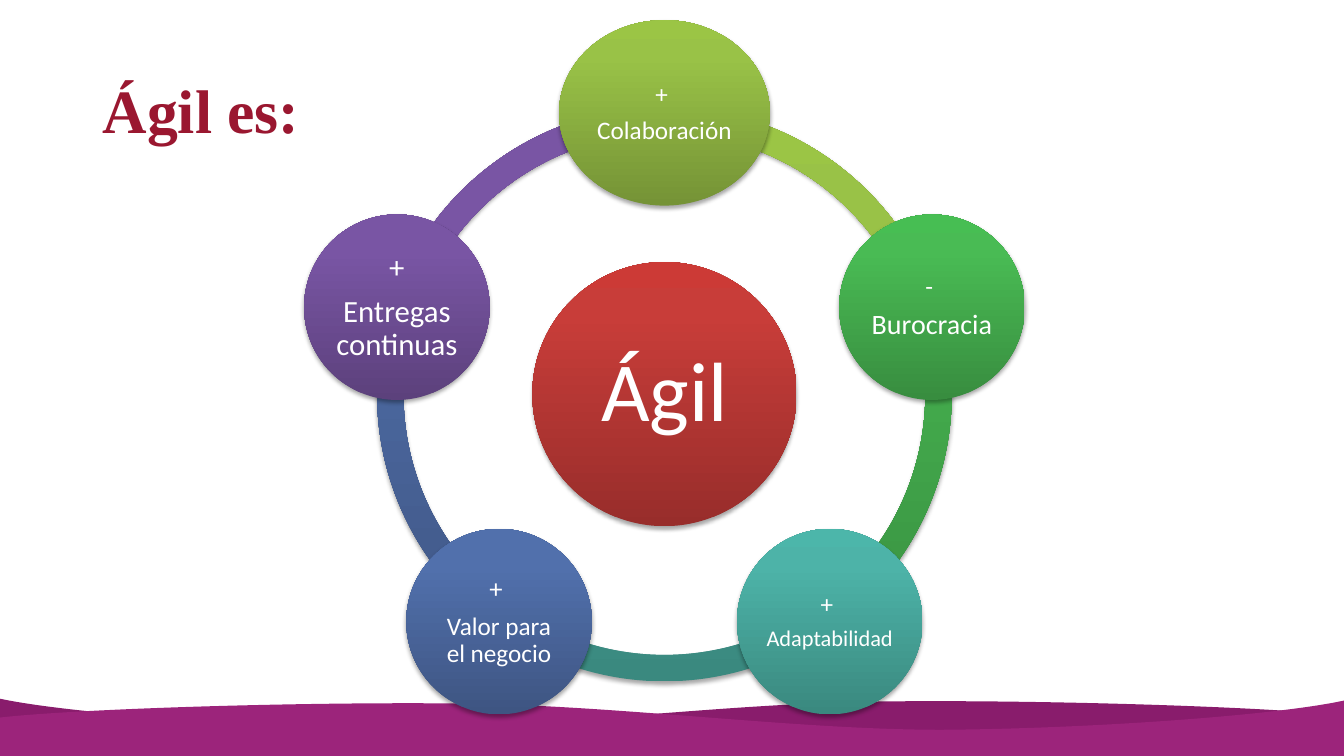
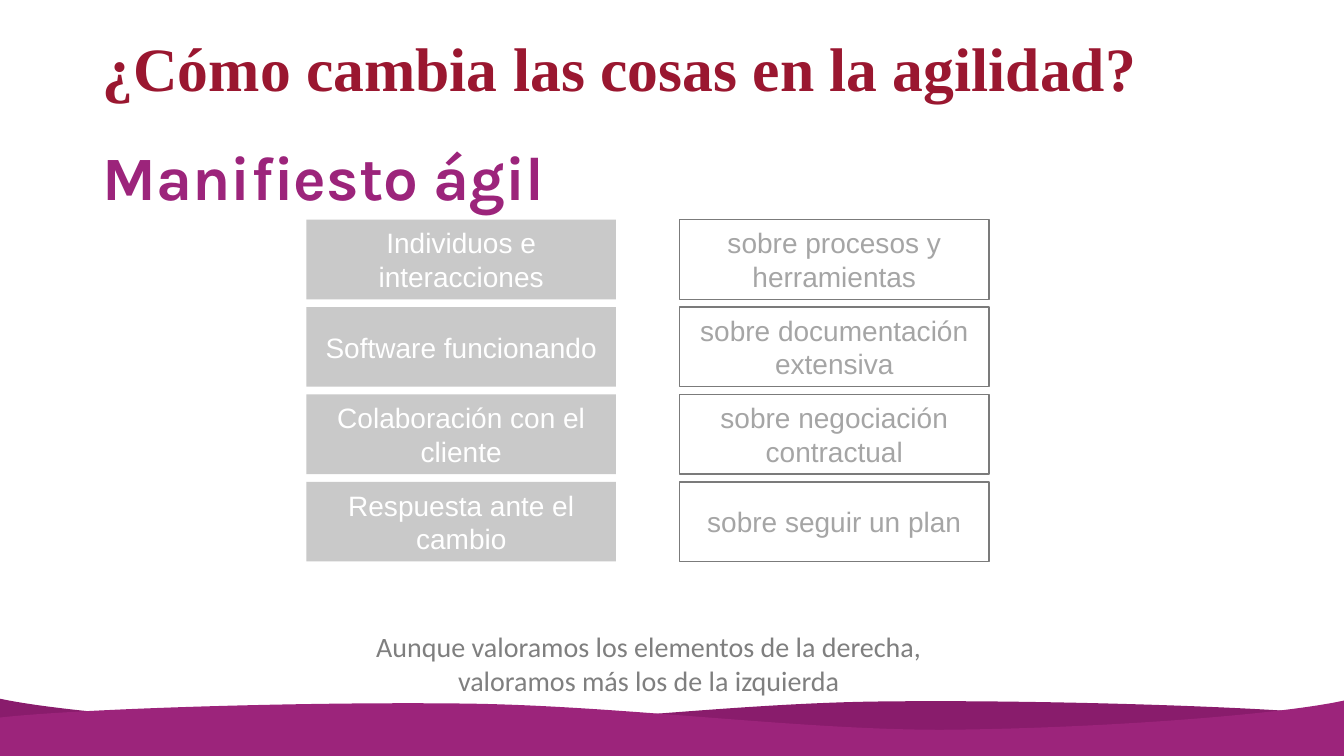
from copy import deepcopy
from dataclasses import dataclass
from math import cos, radians, sin

from lxml import etree
from pptx import Presentation
from pptx.dml.color import RGBColor
from pptx.enum.shapes import MSO_SHAPE as Preset
from pptx.enum.text import MSO_ANCHOR as Anchor, PP_ALIGN as Align
from pptx.oxml.ns import qn
from pptx.util import Inches, Pt


@dataclass(frozen=True)
class Theme:
    """Colours, fonts and type sizes shared by the slides."""
    title: str = "9A1730"
    wave_back: str = "891C6C"
    wave_front: str = "9C247B"
    white: str = "FFFFFF"
    valued: str = "C9C9C9"
    other_text: str = "A5A5A5"
    other_line: str = "7B7B7B"
    note: str = "7F7F7F"
    title_font: str = "Times New Roman"
    subtitle_font: str = "Karla"
    body_font: str = "Calibri"
    box_font: str = "Arial"
    title_size: float = 44
    hub_size: float = 60
    body_size: float = 20


THEME = Theme()
SLIDE_WIDTH, SLIDE_HEIGHT = 13.33, 7.5


@dataclass(frozen=True)
class Box:
    left: float
    top: float
    width: float
    height: float

    def lengths(self) -> list:
        return [Inches(v) for v in (self.left, self.top, self.width, self.height)]

    @classmethod
    def centred(cls, x: float, y: float, width: float, height: float) -> "Box":
        return cls(x - width / 2, y - height / 2, width, height)


@dataclass(frozen=True)
class Para:
    text: str
    font: str
    size: float
    color: str
    bold: bool = False
    align: Align = Align.CENTER
    line_spacing: float = 1.0
    space_before: float = 0


@dataclass(frozen=True)
class Gradient:
    bottom: str
    middle: str
    top: str


@dataclass(frozen=True)
class Node:
    sign: str
    label: str
    gradient: Gradient
    sign_size: float
    label_size: float
    inset: float
    width: float = 1.84


# Ring of slide 1, clockwise from the top
NODES = (
    Node("+ ", "Colaboración", Gradient("759336", "99C247", "9BC545"), 18, 18, 0.02, 2.09),
    Node("- ", "Burocracia", Gradient("388D3F", "49BB54", "47BE53"), 18, 20, 0.02),
    Node("+ ", "Adaptabilidad", Gradient("3A897F", "4DB3A8", "4CB6AA"), 18, 16, 0),
    Node("+ ", "Valor para el negocio", Gradient("3E5582", "5170AC", "506FAF"), 19, 18, 0.03),
    Node("+", "Entregas continuas", Gradient("5C417C", "7955A4", "7955A6"), 22, 22, 0.03),
)
HUB_GRADIENT = Gradient("982D2B", "C83D39", "CC3A36")
CENTRE_X, CENTRE_Y = 6.59, 3.91
ORBIT, RING, HUB, NODE_HEIGHT = 2.79, 5.7, 2.62, 1.84
RING_THICKNESS = 0.046

# Pairs of slide 2
PAIRS = (
    ("Individuos e interacciones", "sobre procesos y herramientas"),
    ("Software funcionando", "sobre documentación extensiva"),
    ("Colaboración con el cliente", "sobre negociación contractual"),
    ("Respuesta ante el cambio", "sobre seguir un plan"),
)
LEFT_COLUMN, RIGHT_COLUMN = 3.04, 6.74
FIRST_ROW, LAST_ROW = 2.18, 4.78
PAIR_WIDTH, PAIR_HEIGHT = 3.07, 0.79

# Top edge of the back wave, as Bézier points from right to left
WAVE = ((13.33, 7.1), (12.56, 7.01), (10.26, 6.94), (8.7, 6.96), (7.15, 6.98),
        (5.43, 7.22), (3.98, 7.22), (2.53, 7.21), (0.68, 7.08), (-0.01, 6.93))


def rgb(color: str) -> RGBColor:
    return RGBColor.from_string(color)


def write(shape, paras: list, inset_x: float = 0.1, inset_y: float = 0.05,
          anchor=Anchor.MIDDLE) -> None:
    frame = shape.text_frame
    frame.word_wrap = True
    frame.vertical_anchor = anchor
    frame.margin_left = frame.margin_right = Inches(inset_x)
    frame.margin_top = frame.margin_bottom = Inches(inset_y)
    for index, para in enumerate(paras):
        target = frame.add_paragraph() if index else frame.paragraphs[0]
        target.text = para.text
        target.alignment = para.align
        target.line_spacing = para.line_spacing
        if para.space_before:
            target.space_before = Pt(para.space_before)
        font = target.font
        font.name, font.size, font.bold = para.font, Pt(para.size), para.bold
        font.color.rgb = rgb(para.color)


def add_text(page, box: Box, para: Para, anchor=Anchor.MIDDLE) -> None:
    write(page.shapes.add_textbox(*box.lengths()), [para], anchor=anchor)


def add_plain(page, preset, box: Box):
    shape = page.shapes.add_shape(preset, *box.lengths())
    shape.shadow.inherit = False
    shape.line.fill.background()
    return shape


def add_glossy(page, preset, box: Box, gradient: Gradient):
    """Shape with a vertical three-stop gradient and a soft shadow."""
    shape = add_plain(page, preset, box)
    fill = shape.fill
    fill.gradient()
    fill.gradient_angle = 90
    properties = shape.element.spPr
    stops = properties.find(qn("a:gradFill")).find(qn("a:gsLst"))
    stops.append(deepcopy(stops[-1]))
    colors = (gradient.bottom, gradient.middle, gradient.top)
    for stop, position, color in zip(fill.gradient_stops, (0, 0.8, 1), colors):
        stop.position = position
        stop.color.rgb = rgb(color)
    shadow = etree.SubElement(
        properties.find(qn("a:effectLst")), qn("a:outerShdw"),
        blurRad=str(Pt(3.1)), dist=str(Pt(1.8)), dir="5400000", rotWithShape="0")
    black = etree.SubElement(shadow, qn("a:srgbClr"), val="000000")
    etree.SubElement(black, qn("a:alpha"), val="34000")
    return shape


def add_wave(page, edge: list, color: str):
    """Band from a curved top edge down to the foot of the slide."""
    outline = list(edge) + [(edge[-1][0], SLIDE_HEIGHT), (edge[0][0], SLIDE_HEIGHT)]
    points = [(Inches(x), Inches(y)) for x, y in outline]
    builder = page.shapes.build_freeform(*points[0])
    builder.add_line_segments(points[1:], close=True)
    wave = builder.convert_to_shape()
    wave.shadow.inherit = False
    wave.fill.solid()
    wave.fill.fore_color.rgb = rgb(color)
    wave.line.fill.background()

    # Join each three edge points into one cubic curve
    segments = list(wave.element.iter(qn("a:lnTo")))[:len(edge) - 1]
    for start in range(0, len(segments), 3):
        group = segments[start:start + 3]
        curve = etree.Element(qn("a:cubicBezTo"))
        group[0].addprevious(curve)
        for segment in group:
            curve.append(segment[0])
            segment.getparent().remove(segment)
    return wave


def move_waves_to_layout(page) -> None:
    """Draw both waves and hand them to the layout all pages share."""
    layout = page.slide_layout
    for holder in list(layout.placeholders):
        holder.element.getparent().remove(holder.element)
    mirrored = [(13.32 - x, y + 0.02) for x, y in WAVE]
    waves = [add_wave(page, WAVE, THEME.wave_back),
             add_wave(page, mirrored, THEME.wave_front)]
    for wave in waves:
        layout.element.cSld.spTree.append(wave.element)


def add_page(deck, title: str, title_top: float):
    """Blank page with the title; the first one also sets up the waves."""
    page = deck.slides.add_slide(deck.slide_layouts[6])
    if len(deck.slides) == 1:
        move_waves_to_layout(page)
    add_text(page, Box(0.92, title_top, 11.5, 1.45),
             Para(title, THEME.title_font, THEME.title_size, THEME.title,
                  bold=True, align=Align.JUSTIFY, line_spacing=0.9))
    return page


def node_para(text: str, size: float, space_before: float = 0) -> Para:
    return Para(text, THEME.body_font, size, THEME.white,
                line_spacing=0.9, space_before=space_before)


def build_ring(deck) -> None:
    page = add_page(deck, "Ágil es:", 0.4)
    step = 360 / len(NODES)
    angles = [(270 + step * index) % 360 for index in range(len(NODES))]

    # Arcs, each running from its node to the next
    for node, angle in reversed(list(zip(NODES, angles))):
        arc = add_glossy(page, Preset.BLOCK_ARC,
                         Box.centred(CENTRE_X, CENTRE_Y, RING, RING), node.gradient)
        # Angles are stored in 60000ths of a degree, adjustments in 100000ths
        arc.adjustments[0] = angle * 0.6
        arc.adjustments[1] = (angle + step) % 360 * 0.6
        arc.adjustments[2] = RING_THICKNESS

    # Hub
    hub = add_glossy(page, Preset.OVAL,
                     Box.centred(CENTRE_X, CENTRE_Y, HUB, HUB), HUB_GRADIENT)
    write(hub, [node_para("Ágil", THEME.hub_size)], 0.08, 0.08)

    # Nodes
    for node, angle in zip(NODES, angles):
        x = CENTRE_X + ORBIT * cos(radians(angle))
        y = CENTRE_Y + ORBIT * sin(radians(angle))
        oval = add_glossy(page, Preset.OVAL,
                          Box.centred(x, y, node.width, NODE_HEIGHT), node.gradient)
        write(oval, [node_para(node.sign, node.sign_size),
                     node_para(node.label, node.label_size, 0.35 * node.sign_size)],
              node.inset, node.inset)


def add_statement(page, left: float, top: float, text: str, fill: str, color: str):
    box = add_plain(page, Preset.RECTANGLE, Box(left, top, PAIR_WIDTH, PAIR_HEIGHT))
    box.fill.solid()
    box.fill.fore_color.rgb = rgb(fill)
    write(box, [Para(text, THEME.box_font, THEME.body_size, color)])
    return box


def build_manifesto(deck) -> None:
    page = add_page(deck, "¿Cómo cambia las cosas en la agilidad?", -0.02)

    # Two columns of statements
    pitch = (LAST_ROW - FIRST_ROW) / (len(PAIRS) - 1)
    for row, (valued, other) in enumerate(PAIRS):
        top = FIRST_ROW + row * pitch
        add_statement(page, LEFT_COLUMN, top, valued, THEME.valued, THEME.white)
        box = add_statement(page, RIGHT_COLUMN, top, other, THEME.white, THEME.other_text)
        box.line.color.rgb = rgb(THEME.other_line)
        box.line.width = Pt(1)

    # Subtitle and closing note
    add_text(page, Box(0.92, 1.07, 11.5, 1.45),
             Para("Manifiesto ágil", THEME.subtitle_font, THEME.title_size,
                  THEME.wave_front, bold=True, align=Align.LEFT, line_spacing=0.9))
    add_text(page, Box(3.52, 6.2, 5.83, 0.71),
             Para("Aunque valoramos los elementos de la derecha, "
                  "valoramos más los de la izquierda",
                  THEME.body_font, THEME.body_size, THEME.note), anchor=Anchor.TOP)


def main() -> None:
    deck = Presentation()
    deck.slide_width, deck.slide_height = Inches(SLIDE_WIDTH), Inches(SLIDE_HEIGHT)
    build_ring(deck)
    build_manifesto(deck)
    deck.save("out.pptx")


if __name__ == "__main__":
    main()
